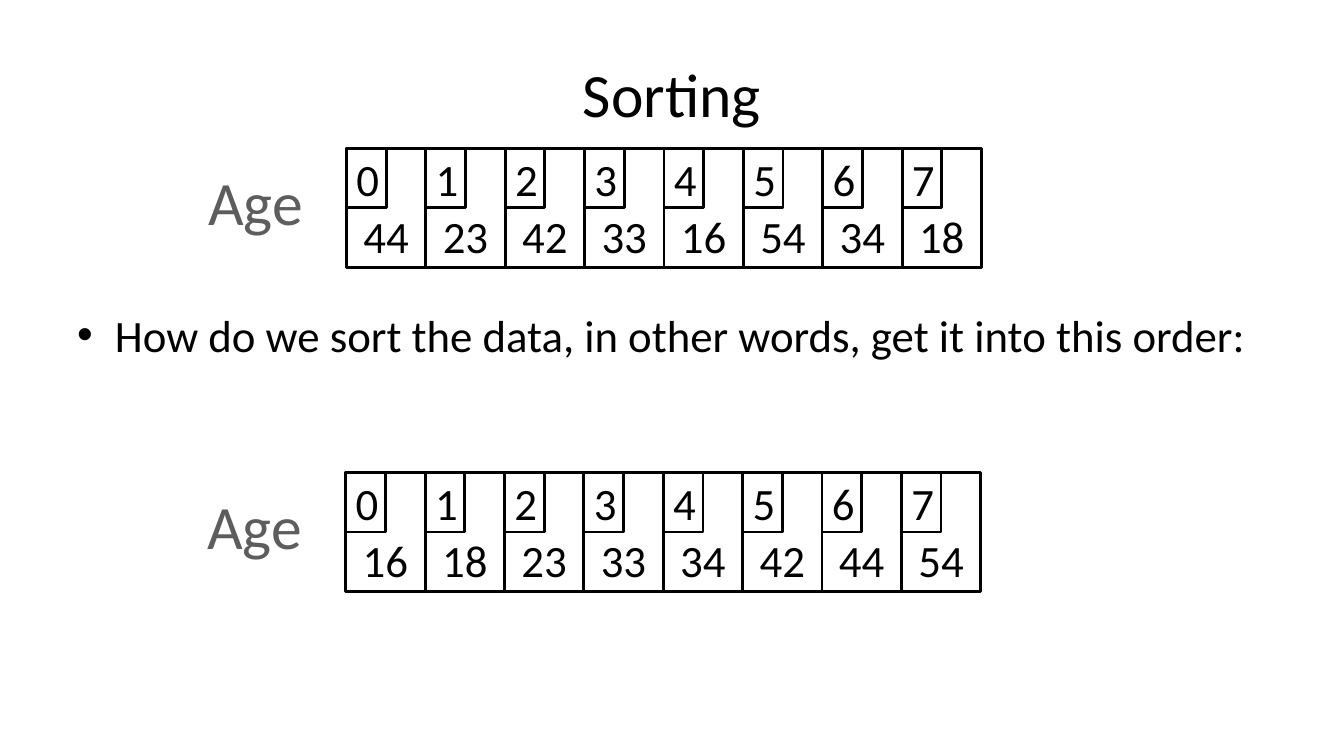
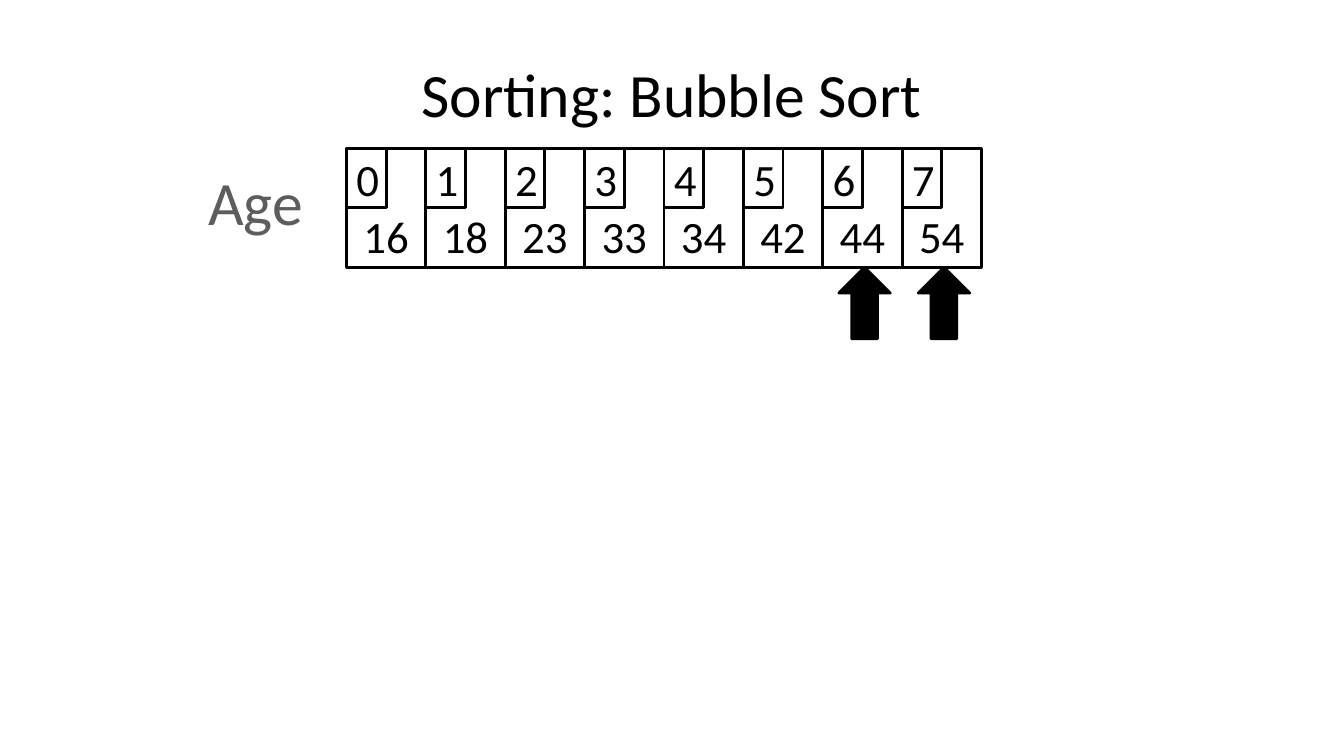
from dataclasses import dataclass

from lxml import etree
from pptx import Presentation
from pptx.dml.color import RGBColor
from pptx.enum.shapes import MSO_SHAPE
from pptx.enum.text import MSO_ANCHOR, PP_ALIGN
from pptx.oxml.ns import qn
from pptx.util import Pt

RECTANGLE, UP_ARROW = MSO_SHAPE.RECTANGLE, MSO_SHAPE.UP_ARROW
TOP, MIDDLE = MSO_ANCHOR.TOP, MSO_ANCHOR.MIDDLE
LEFT, CENTER = PP_ALIGN.LEFT, PP_ALIGN.CENTER

COLORS = {"ink": "000000", "label": "5D5D5D"}
FONT = "Calibri"
HEADING_SIZE, TEXT_SIZE = 44, 32

CELL_WIDTH, CELL_HEIGHT = 56.7, 85
INDEX_WIDTH, INDEX_HEIGHT = CELL_WIDTH / 2, CELL_HEIGHT / 2
ARROW_WIDTH, ARROW_HEIGHT, ARROW_OFFSET = 36.7, 51, 11.5
LINE_WIDTH = 2
BULLET_INDENT = 27

VALUE_FRAME = {"margin_top": Pt(42.6)}
INDEX_FRAME = {"margin_left": Pt(2), "margin_right": Pt(0)}
QUESTION_FRAME = {"vertical_anchor": TOP, "margin_top": Pt(93.5)}
LABEL_FRAME = {"vertical_anchor": TOP, "word_wrap": False}


@dataclass(frozen=True)
class Box:
    left: float
    top: float
    width: float
    height: float

    def lengths(self) -> tuple:
        return tuple(Pt(n) for n in (self.left, self.top, self.width, self.height))


@dataclass(frozen=True)
class AgeArray:
    left: float
    top: float
    ages: tuple[int, ...]
    marked: tuple[int, ...] = ()


@dataclass(frozen=True)
class SortingSlide:
    title: str
    arrays: tuple[AgeArray, ...]
    question: str = ""


TITLE_BOX = Box(48, 21.6, 864, 90)
QUESTION_BOX = Box(48, 126, 864, 356.4)

UNSORTED = (44, 23, 42, 33, 16, 54, 34, 18)
ORDERED = tuple(sorted(UNSORTED))
UPPER, LOWER = (247.5, 106), (247, 337.5)

SLIDES = (
    SortingSlide(
        "Sorting",
        (AgeArray(*UPPER, UNSORTED), AgeArray(*LOWER, ORDERED)),
        "How do we sort the data, in other words, get it into this order:",
    ),
    SortingSlide("Sorting: Bubble Sort", (AgeArray(*UPPER, ORDERED, marked=(6, 7)),)),
)


def color(key: str) -> RGBColor:
    return RGBColor.from_string(COLORS[key])


def write(shape, text: str, size: float, ink: str = "ink", align=CENTER, frame_format=None):
    """Fill a shape with one paragraph and return that paragraph."""
    frame = shape.text_frame
    settings = {"word_wrap": True, "vertical_anchor": MIDDLE} | (frame_format or {})
    for attribute, value in settings.items():
        setattr(frame, attribute, value)
    paragraph = frame.paragraphs[0]
    paragraph.text = text
    paragraph.alignment = align
    font_format = {"name": FONT, "size": Pt(size)}
    for attribute, value in font_format.items():
        setattr(paragraph.font, attribute, value)
    paragraph.font.color.rgb = color(ink)
    return paragraph


def add_outlined(slide, kind, box: Box, filled: bool = False):
    shape = slide.shapes.add_shape(kind, *box.lengths())
    shape.shadow.inherit = False
    if filled:
        shape.fill.solid()
        shape.fill.fore_color.rgb = color("ink")
    else:
        shape.fill.background()
    shape.line.color.rgb = color("ink")
    shape.line.width = Pt(LINE_WIDTH)
    return shape


def add_bullet(paragraph) -> None:
    properties = paragraph._p.get_or_add_pPr()
    properties.set("marL", str(Pt(BULLET_INDENT)))
    properties.set("indent", str(-Pt(BULLET_INDENT)))
    etree.SubElement(properties, qn("a:buFont")).set("typeface", "Arial")
    etree.SubElement(properties, qn("a:buChar")).set("char", "•")


def add_title(slide, text: str) -> None:
    write(slide.shapes.add_textbox(*TITLE_BOX.lengths()), text, HEADING_SIZE)


def add_question(slide, text: str) -> None:
    question = slide.shapes.add_textbox(*QUESTION_BOX.lengths())
    add_bullet(write(question, text, TEXT_SIZE, align=LEFT, frame_format=QUESTION_FRAME))


def add_age_array(slide, array: AgeArray) -> None:
    """Draw the value cells, their index corners, the label and the arrows."""
    lefts = [array.left + i * CELL_WIDTH for i in range(len(array.ages))]
    for left, age in zip(lefts, array.ages):
        cell = add_outlined(slide, RECTANGLE, Box(left, array.top, CELL_WIDTH, CELL_HEIGHT))
        write(cell, str(age), TEXT_SIZE, frame_format=VALUE_FRAME)
    for index, left in enumerate(lefts):
        corner = add_outlined(slide, RECTANGLE, Box(left, array.top, INDEX_WIDTH, INDEX_HEIGHT))
        write(corner, str(index), TEXT_SIZE, frame_format=INDEX_FRAME)

    label_box = Box(array.left - 107, array.top + 7.5, 84, 60.5)
    label = slide.shapes.add_textbox(*label_box.lengths())
    write(label, "Age", HEADING_SIZE, ink="label", frame_format=LABEL_FRAME)

    for index in array.marked:
        arrow_box = Box(lefts[index] + ARROW_OFFSET, array.top + CELL_HEIGHT,
                        ARROW_WIDTH, ARROW_HEIGHT)
        add_outlined(slide, UP_ARROW, arrow_box, filled=True)


def main() -> None:
    presentation = Presentation()
    presentation.slide_width, presentation.slide_height = Pt(960), Pt(540)
    blank = presentation.slide_layouts[6]
    for content in SLIDES:
        slide = presentation.slides.add_slide(blank)
        add_title(slide, content.title)
        for array in content.arrays:
            add_age_array(slide, array)
        if content.question:
            add_question(slide, content.question)
    presentation.save("out.pptx")


if __name__ == "__main__":
    main()
